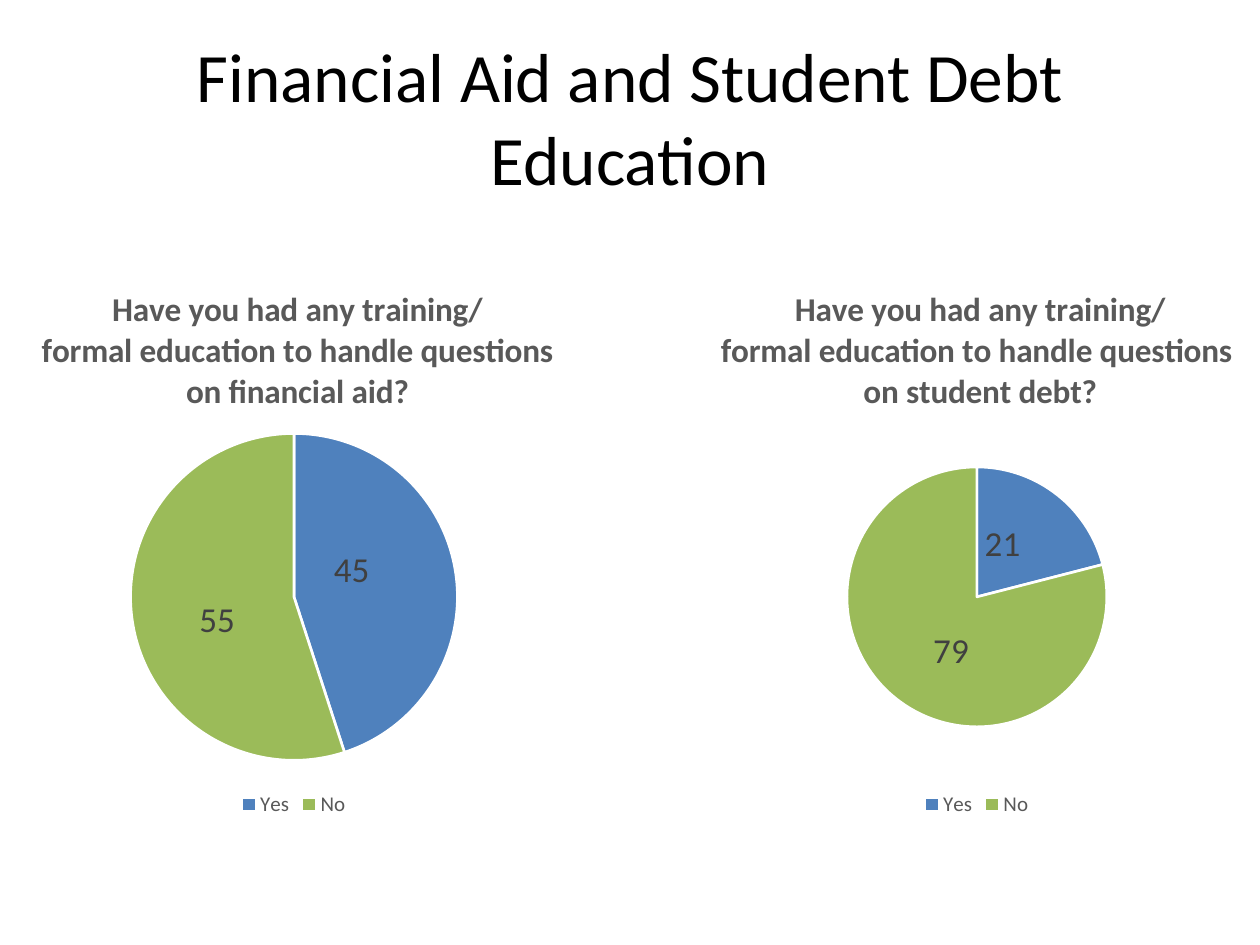
from lxml import etree
from pptx import Presentation
from pptx.chart.data import CategoryChartData
from pptx.dml.color import RGBColor
from pptx.enum.chart import XL_CHART_TYPE, XL_LABEL_POSITION, XL_LEGEND_POSITION
from pptx.enum.text import MSO_ANCHOR, PP_ALIGN
from pptx.oxml.ns import qn
from pptx.util import Emu, Pt

PIE = XL_CHART_TYPE.PIE
LABEL_CENTER = XL_LABEL_POSITION.CENTER
LEGEND_BOTTOM = XL_LEGEND_POSITION.BOTTOM
MIDDLE = MSO_ANCHOR.MIDDLE
CENTER = PP_ALIGN.CENTER

PX = 914400 // 126
SLIDE_SIZE = (1260, 945)
CHART_TOP, CHART_WIDTH, CHART_HEIGHT = 262, 840, 560
PIE_MIDDLE = 335
HEADING_TOP = 22

COLORS = {
    "black": "000000",
    "heading": "595959",
    "label": "404040",
    "edge": "FFFFFF",
    "Yes": "4F81BD",
    "No": "9BBB59",
}

# Label shifts are px away from the middle of each slice.
SURVEYS = [
    {
        "question": "Have you had any training/\nformal education to handle questions\non financial aid?",
        "answers": {"Yes": 45, "No": 55},
        "left": -126,
        "diameter": 327,
        "heading_left": 164,
        "label_shifts": [(-23, -14), (4, 10)],
    },
    {
        "question": "Have you had any training/\nformal education to handle questions \non student debt?",
        "answers": {"Yes": 21, "No": 79},
        "left": 557,
        "diameter": 260,
        "heading_left": 160,
        "label_shifts": [(-14, -2), (14, 3)],
    },
]


def set_layout(parent, index, **values):
    """Give a chart part a manual layout as its child number index."""
    for old in parent.findall(qn("c:layout")):
        parent.remove(old)
    layout = etree.Element(qn("c:layout"))
    manual = etree.SubElement(layout, qn("c:manualLayout"))
    for tag, value in values.items():
        etree.SubElement(manual, qn(f"c:{tag}")).set("val", str(value))
    parent.insert(index, layout)


def fractions(x, y):
    return {"x": round(x / CHART_WIDTH, 4), "y": round(y / CHART_HEIGHT, 4)}


class SurveySlide:
    def __init__(self, presentation, font_name):
        self.slide = presentation.slides.add_slide(presentation.slide_layouts[5])
        self.font_name = font_name

    def style(self, font, color, size, bold=False):
        settings = {"name": self.font_name, "size": Pt(size), "bold": bold}
        for name, value in settings.items():
            setattr(font, name, value)
        font.color.rgb = RGBColor.from_string(COLORS[color])

    def title(self, text, left, top, width, height):
        title = self.slide.shapes.title
        box = {"left": left, "top": top, "width": width, "height": height}
        for name, value in box.items():
            setattr(title, name, Emu(value * PX))
        frame = title.text_frame
        frame.text = text
        frame.word_wrap = True
        frame.vertical_anchor = MIDDLE
        paragraph = frame.paragraphs[0]
        paragraph.alignment = CENTER
        self.style(paragraph.runs[0].font, "black", 39.6)

    def pie(self, question, answers, left, diameter, heading_left, label_shifts):
        data = CategoryChartData()
        data.categories = list(answers)
        data.add_series("Series 1", list(answers.values()))
        box = [Emu(n * PX) for n in (left, CHART_TOP, CHART_WIDTH, CHART_HEIGHT)]
        chart = self.slide.shapes.add_chart(PIE, *box, data).chart
        self.style(chart.font, "black", 10)

        heading = chart.chart_title
        heading.text_frame.text = question
        for paragraph in heading.text_frame.paragraphs:
            self.style(paragraph.runs[0].font, "heading", 19, bold=True)
        set_layout(heading._element, 1, xMode="edge", yMode="edge",
                   **fractions(heading_left, HEADING_TOP))

        chart.has_legend = True
        chart.legend.position = LEGEND_BOTTOM
        chart.legend.include_in_layout = False
        self.style(chart.legend.font, "heading", 12)

        plot = chart.plots[0]
        plot.vary_by_categories = True
        corner = fractions((CHART_WIDTH - diameter) / 2, PIE_MIDDLE - diameter / 2)
        extent = fractions(diameter, diameter)
        set_layout(plot._element.getparent(), 0, layoutTarget="inner",
                   xMode="edge", yMode="edge", **corner, w=extent["x"], h=extent["y"])

        for index, (answer, shift) in enumerate(zip(answers, label_shifts)):
            self.slice(plot.series[0].points[index], answer, shift)

    def slice(self, point, answer, shift):
        point.format.fill.solid()
        point.format.fill.fore_color.rgb = RGBColor.from_string(COLORS[answer])
        point.format.line.color.rgb = RGBColor.from_string(COLORS["edge"])
        point.format.line.width = Pt(1.5)
        label = point.data_label
        self.style(label.font, "label", 20)
        label.position = LABEL_CENTER
        label_element = label.font._element.getparent()
        while label_element.tag != qn("c:dLbl"):
            label_element = label_element.getparent()
        set_layout(label_element, 1, **fractions(*shift))


def main():
    presentation = Presentation()
    presentation.slide_width, presentation.slide_height = (Emu(n * PX) for n in SLIDE_SIZE)
    survey_slide = SurveySlide(presentation, "Calibri")
    survey_slide.title("Financial Aid and Student Debt Education", 63, 38, 1134, 157)
    for survey in SURVEYS:
        survey_slide.pie(**survey)
    presentation.save("out.pptx")


if __name__ == "__main__":
    main()
